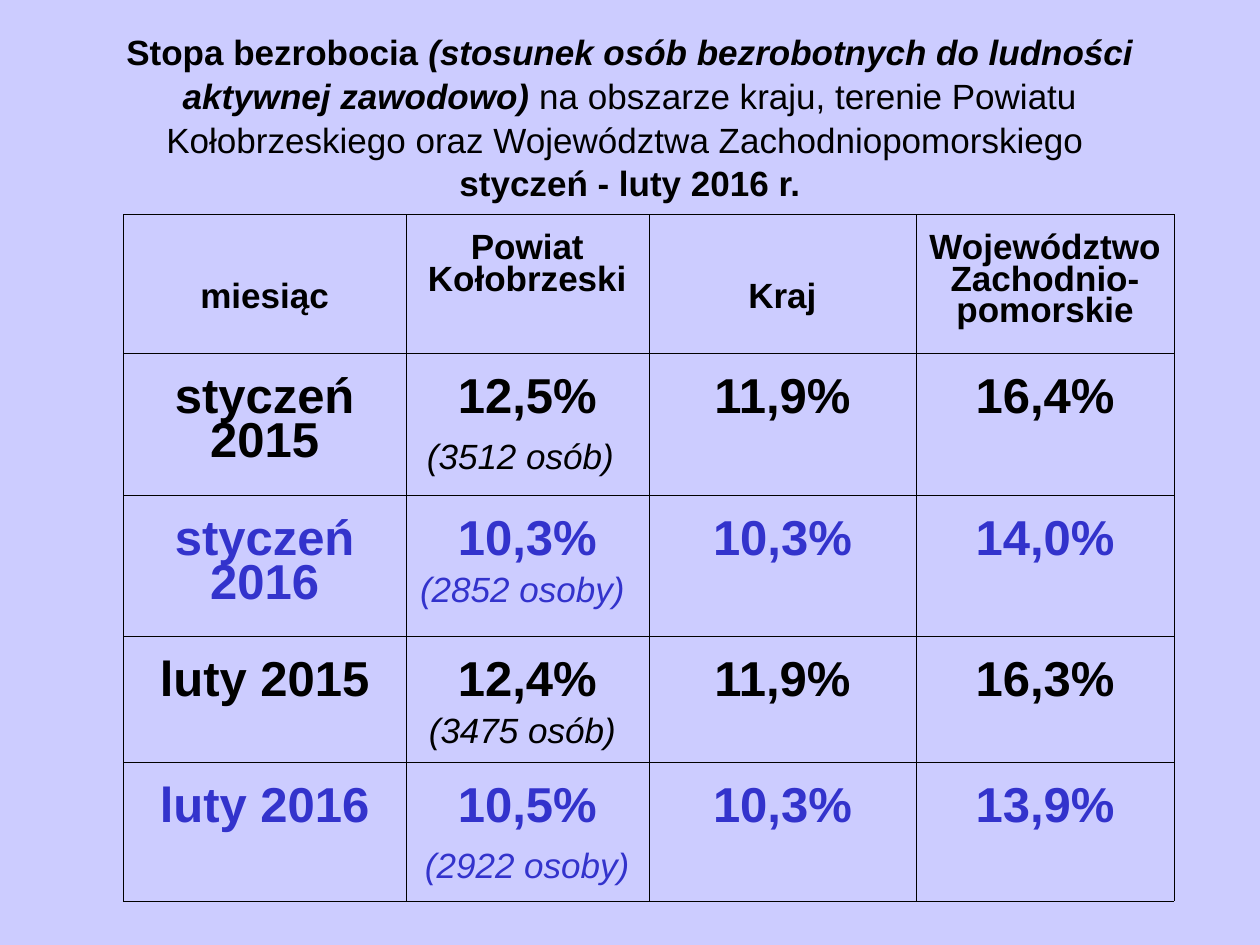
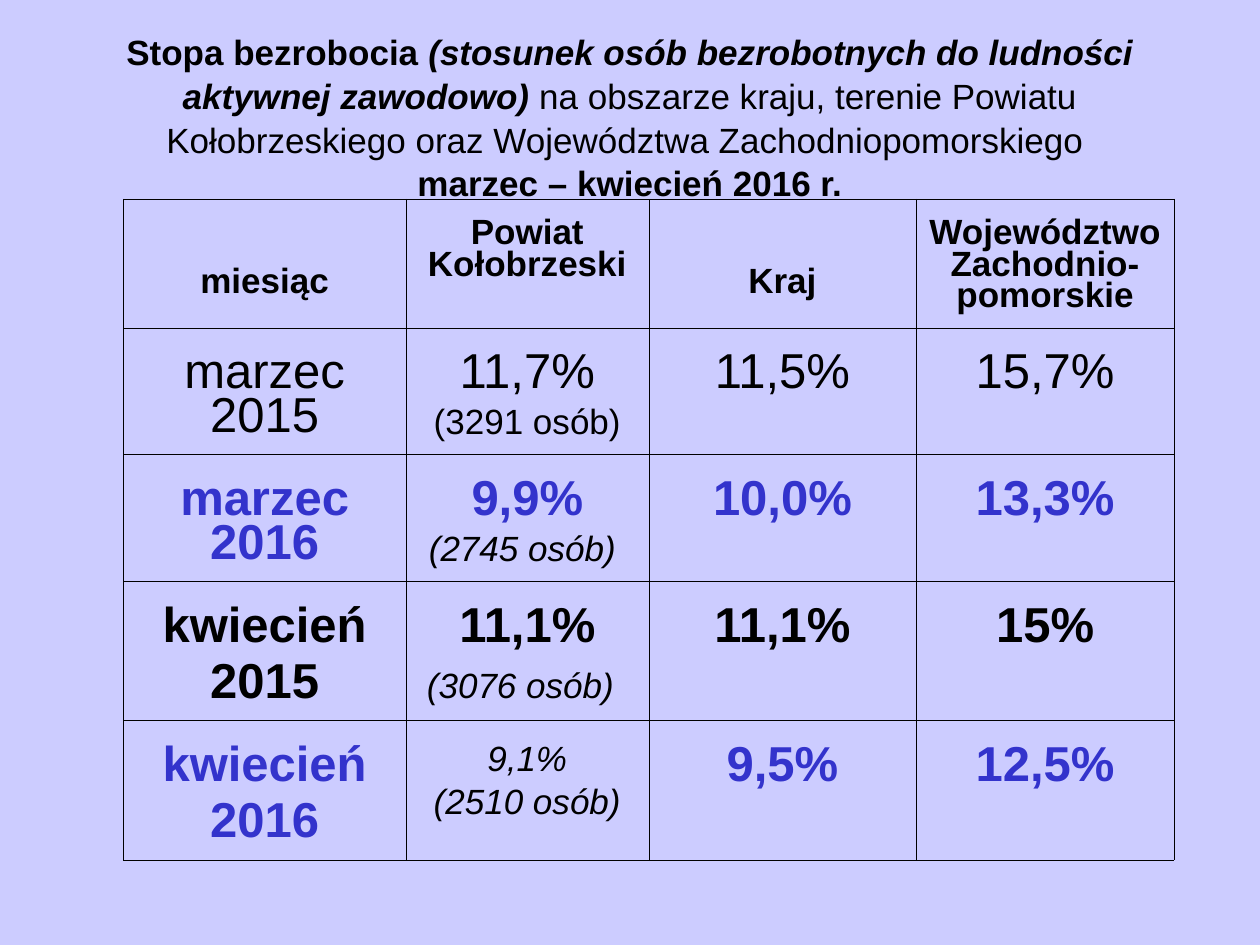
from lxml import etree
from pptx import Presentation
from pptx import util as u
from pptx.dml.color import RGBColor
from pptx.enum import text
from pptx.oxml import ns

BACKGROUND, BLACK, BLUE = "CCCCFF", "000000", "3333CC"
FONT = "Arial"

# Run styles: size, bold, italic, colour
HEADING = (20, True, False, BLACK)
HEADING_ITALIC = (20, True, True, BLACK)
PLAIN = (20, False, False, BLACK)
NOTE = (20, False, True, BLACK)
NOTE_BLUE = (20, False, True, BLUE)
RATE = (28, True, False, BLACK)
RATE_BLUE = (28, True, False, BLUE)
RATE_PLAIN = (28, False, False, BLACK)
TALL_SPACE = (" ", (28, False, False, BLACK))


def color(hex_string):
    return RGBColor.from_string(hex_string)


def add_runs(paragraph, runs):
    paragraph.alignment = text.PP_ALIGN.CENTER
    for words, (size, bold, italic, hex_string) in runs:
        run = paragraph.add_run()
        run.text = words
        run.font.name = FONT
        run.font.size = u.Pt(size)
        run.font.bold = bold
        run.font.italic = italic
        run.font.color.rgb = color(hex_string)


# Table shared by both slides
COLUMN_WIDTHS = [2.24, 1.93, 2.12, 2.05]
HEADERS = ["miesiąc", "Powiat Kołobrzeski", "Kraj", "Województwo Zachodnio-pomorskie"]
LOWERED_HEADERS = ["miesiąc", "Kraj"]

# Each row: main style, month lines, county paragraphs, country rate, province rate
SLIDES = [
    {
        "period": "styczeń - luty 2016 r.",
        "table_top": 1.7,
        "row_heights": [1.1, 1.13, 1.12, 0.98, 1.06],
        "rows": [
            (RATE, ["styczeń 2015"],
             [[("12,5%", RATE)], [("(3512 osób)", NOTE), TALL_SPACE]], "11,9%", "16,4%"),
            (RATE_BLUE, ["styczeń 2016"],
             [[("10,3%", RATE_BLUE)], [("(2852 osoby) ", NOTE_BLUE)]], "10,3%", "14,0%"),
            (RATE, ["luty 2015"],
             [[("12,4%", RATE)], [("(3475 osób) ", NOTE)]], "11,9%", "16,3%"),
            (RATE_BLUE, ["luty 2016"],
             [[("10,5%", RATE_BLUE)], [("(2922 osoby)", NOTE_BLUE), TALL_SPACE]], "10,3%", "13,9%"),
        ],
    },
    {
        "period": "marzec – kwiecień 2016 r.",
        "table_top": 1.58,
        "row_heights": [0.96, 0.96, 0.95, 1.06, 1.05],
        "rows": [
            (RATE_PLAIN, ["marzec 2015"],
             [[("11,7%", RATE_PLAIN)], [("(3291 osób)", PLAIN)]], "11,5%", "15,7%"),
            (RATE_BLUE, ["marzec 2016"],
             [[("9,9%", RATE_BLUE)], [("(2745 osób) ", NOTE)]], "10,0%", "13,3%"),
            (RATE, ["kwiecień", "2015"],
             [[("11,1%", RATE)], [("(3076 osób)", NOTE), TALL_SPACE]], "11,1%", "15%"),
            (RATE_BLUE, ["kwiecień", "2016"],
             [[("9,1%", NOTE)], [("(2510 osób)", NOTE)]], "9,5%", "12,5%"),
        ],
    },
]

presentation = Presentation()
presentation.slide_width = u.Inches(10)
presentation.slide_height = u.Inches(7.5)

for content in SLIDES:
    slide = presentation.slides.add_slide(presentation.slide_layouts[6])
    slide.background.fill.solid()
    slide.background.fill.fore_color.rgb = color(BACKGROUND)

    # Title
    title = slide.shapes.add_textbox(u.Inches(0.5), u.Inches(0.3), u.Inches(9), u.Inches(1.25))
    title.text_frame.word_wrap = True
    title.text_frame.vertical_anchor = text.MSO_ANCHOR.MIDDLE
    paragraph = title.text_frame.paragraphs[0]
    paragraph.line_spacing = 1.04
    add_runs(paragraph, [
        ("Stopa bezrobocia ", HEADING),
        ("(stosunek osób bezrobotnych do ludności aktywnej zawodowo)", HEADING_ITALIC),
        (" na obszarze kraju, terenie Powiatu Kołobrzeskiego oraz "
         "Województwa Zachodniopomorskiego ", PLAIN),
    ])
    paragraph.add_line_break()
    add_runs(paragraph, [(content["period"], HEADING)])

    # Cell contents as paragraphs of runs
    grid = [[[[(header, HEADING)]] for header in HEADERS]]
    for style, month, county, country, province in content["rows"]:
        grid.append([[[(line, style)] for line in month], county,
                     [[(country, style)]], [[(province, style)]]])

    # Table frame
    heights = content["row_heights"]
    frame = slide.shapes.add_table(
        len(grid), len(HEADERS), u.Inches(0.98), u.Inches(content["table_top"]),
        u.Inches(sum(COLUMN_WIDTHS)), u.Inches(sum(heights)))
    table = frame.table
    table.first_row = False
    table.horz_banding = False
    for column, width in zip(table.columns, COLUMN_WIDTHS):
        column.width = u.Inches(width)
    for row, height in zip(table.rows, heights):
        row.height = u.Inches(height)

    # Cells
    for row_index, row_cells in enumerate(grid):
        for column_index, paragraphs in enumerate(row_cells):
            cell = table.cell(row_index, column_index)
            is_header = row_index == 0
            cell.margin_top = u.Inches(0.16 if is_header else 0.2)
            if is_header and HEADERS[column_index] in LOWERED_HEADERS:
                cell.margin_top = u.Inches(0.55)

            # Thin inner borders, slightly heavier outer ones
            outer_edges = {"lnL": column_index == 0,
                           "lnR": column_index == len(HEADERS) - 1,
                           "lnT": is_header,
                           "lnB": row_index == len(grid) - 1}
            properties = cell._tc.get_or_add_tcPr()
            for edge, is_outer in outer_edges.items():
                line = etree.SubElement(properties, ns.qn("a:" + edge),
                                        w=str(u.Pt(0.23 if is_outer else 0.11)))
                fill = etree.SubElement(line, ns.qn("a:solidFill"))
                etree.SubElement(fill, ns.qn("a:srgbClr"), val=BLACK)
            cell.fill.background()

            for index, runs in enumerate(paragraphs):
                text_frame = cell.text_frame
                paragraph = text_frame.add_paragraph() if index else text_frame.paragraphs[0]
                paragraph.line_spacing = 0.81
                paragraph.space_before = u.Pt(5 if is_header else 7)
                add_runs(paragraph, runs)

presentation.save("out.pptx")
